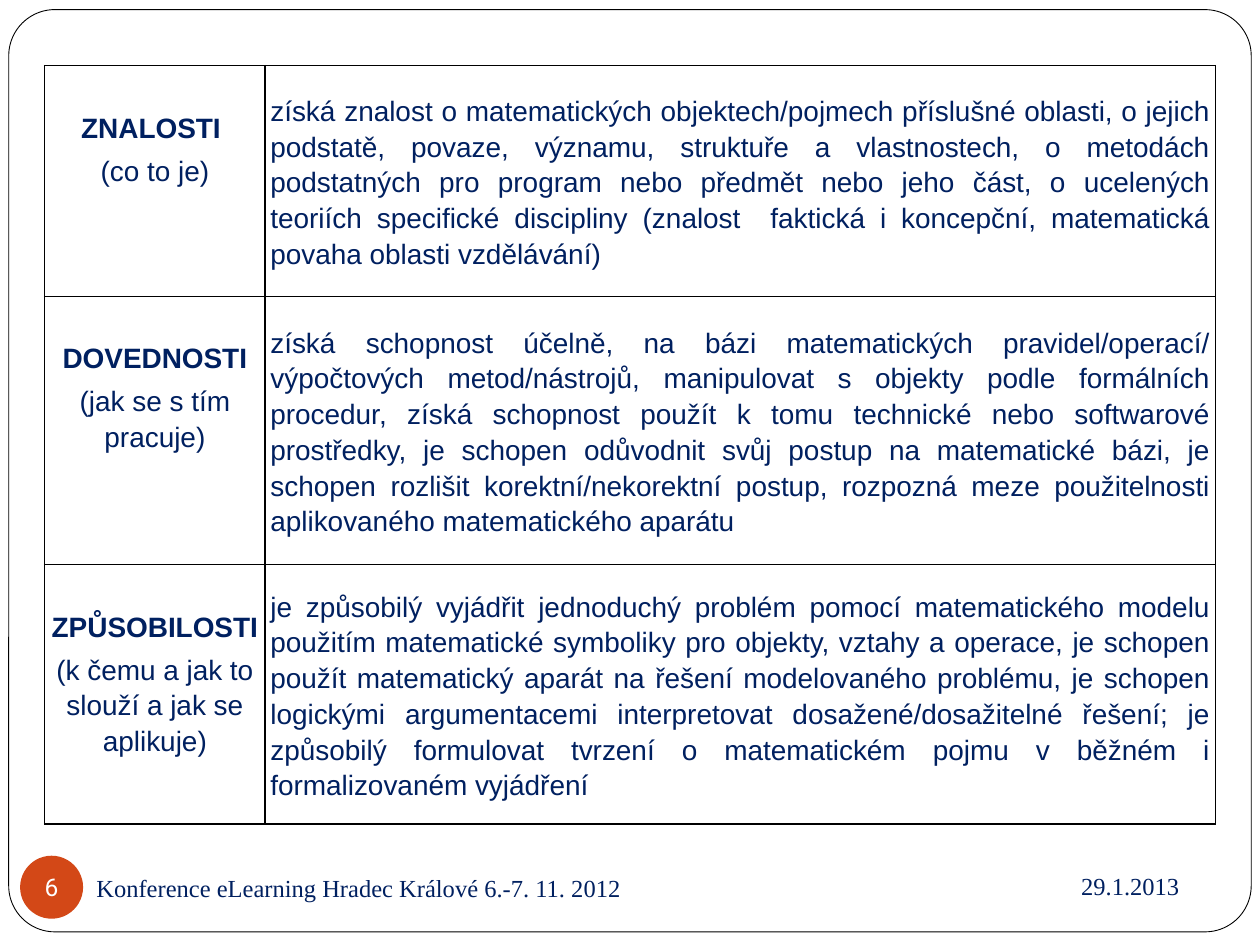
"""Build the slide with the table of learning outcomes."""
import pptx
import pptx.util
import pptx.oxml
import pptx.dml.color
import pptx.enum.shapes
import pptx.enum.text
import pptx.oxml.ns

Pt = pptx.util.Pt
ALIGN = pptx.enum.text.PP_ALIGN
MID = pptx.enum.text.MSO_ANCHOR.MIDDLE
TOP = pptx.enum.text.MSO_ANCHOR.TOP
KIND = pptx.enum.shapes.MSO_SHAPE
HUES = {"ink": "002060", "line": "000000", "back": "FFFFFF", "badge": "D34817"}
ROWS = [
    (131.8, "ZNALOSTI ", "(co to je)",
     "získá znalost o matematických objektech/pojmech příslušné oblasti, o jejich "
     "podstatě, povaze, významu, struktuře a vlastnostech, o metodách podstatných "
     "pro program nebo předmět nebo jeho část, o ucelených teoriích specifické "
     "discipliny (znalost  faktická i koncepční, matematická povaha oblasti vzdělávání)"),
    (153.4, "DOVEDNOSTI", "(jak se s tím pracuje)",
     "získá schopnost účelně, na bázi matematických pravidel/operací/ výpočtových "
     "metod/nástrojů, manipulovat s objekty podle formálních procedur, získá schopnost "
     "použít k tomu technické nebo softwarové prostředky, je schopen odůvodnit svůj "
     "postup na matematické bázi, je schopen rozlišit korektní/nekorektní postup, "
     "rozpozná meze použitelnosti aplikovaného matematického aparátu"),
    (148.3, "ZPŮSOBILOSTI", "(k čemu a jak to slouží a jak se aplikuje)",
     "je způsobilý vyjádřit jednoduchý problém pomocí matematického modelu použitím "
     "matematické symboliky pro objekty, vztahy a operace, je schopen použít "
     "matematický aparát na řešení modelovaného problému, je schopen logickými "
     "argumentacemi interpretovat dosažené/dosažitelné řešení; je způsobilý formulovat "
     "tvrzení o matematickém pojmu v běžném i formalizovaném vyjádření"),
]


def put(item, form):
    for name, value in form.items():
        setattr(item, name, value)


def tint(hue):
    return pptx.dml.color.RGBColor.from_string(HUES[hue])


class Deck:
    """Hold the style and the current slide."""

    small = {"size": Pt(14), "name": "Times New Roman"}
    badge = {"size": Pt(14), "name": "Roboto"}
    body = {"size": Pt(16), "name": "Arial"}
    gaps = {"line_spacing": 1.15, "space_before": Pt(2), "space_after": Pt(2)}
    sides = {"margin_left": Pt(3), "margin_right": Pt(3), "margin_bottom": 0}

    def __init__(self):
        self.show = pptx.Presentation()
        put(self.show, {"slide_width": Pt(720), "slide_height": Pt(540)})
        self.slide = self.show.slides.add_slide(self.show.slide_layouts[6])

    def word(self, para, text, font, hue="ink", bold=False, **form):
        put(para, form)
        run = para.add_run()
        run.text = text
        put(run.font, {**font, "bold": bold})
        run.font.color.rgb = tint(hue)

    def shape(self, kind, box, fill, line=None):
        item = self.slide.shapes.add_shape(kind, *map(Pt, box))
        item.shadow.inherit = False
        item.fill.solid()
        item.fill.fore_color.rgb = tint(fill)
        if line:
            item.line.color.rgb = tint(line)
            item.line.width = Pt(0.5)
        else:
            item.line.fill.background()
        return item

    def label(self, box, text, align):
        frame = self.slide.shapes.add_textbox(*map(Pt, box)).text_frame
        put(frame, {"word_wrap": True, "vertical_anchor": MID})
        self.word(frame.paragraphs[0], text, self.small, alignment=align)

    def disc(self, box, text):
        frame = self.shape(KIND.OVAL, box, "badge").text_frame
        put(frame, {"margin_left": 0, "margin_right": 0, "margin_top": 0,
                    "margin_bottom": 0, "word_wrap": False, "vertical_anchor": MID})
        self.word(frame.paragraphs[0], text, self.badge, "back", alignment=ALIGN.CENTER)

    def edge(self, cell):
        props = cell._tc.get_or_add_tcPr()
        for place, side in enumerate("LRTB"):
            props.insert(place, pptx.oxml.parse_xml(
                f'<a:ln{side} {pptx.oxml.ns.nsdecls("a")} w="{Pt(1)}"><a:solidFill>'
                f'<a:srgbClr val="{HUES["line"]}"/></a:solidFill></a:ln{side}>'))

    def cell(self, cell, parts, align, anchor, top):
        put(cell, {**self.sides, "margin_top": Pt(top), "vertical_anchor": anchor})
        cell.fill.background()
        self.edge(cell)
        frame = cell.text_frame
        for rank, (text, bold) in enumerate(parts):
            para = frame.add_paragraph() if rank else frame.paragraphs[0]
            self.word(para, text, self.body, bold=bold, alignment=align, **self.gaps)

    def table(self, box, wide, rows):
        grid = self.slide.shapes.add_table(len(rows), len(wide), *map(Pt, box)).table
        put(grid, {"first_row": False, "horz_banding": False})
        for col, width in zip(grid.columns, wide):
            col.width = Pt(width)
        for rank, (height, head, hint, text) in enumerate(rows):
            grid.rows[rank].height = Pt(height)
            self.cell(grid.cell(rank, 0), [(head, True), (hint, False)],
                      ALIGN.CENTER, TOP, 24.5)
            self.cell(grid.cell(rank, 1), [(text, False)], ALIGN.JUSTIFY, MID, 0)


def main():
    deck = Deck()
    frame = deck.shape(KIND.ROUNDED_RECTANGLE, (5, 5.5, 710, 527), "back", "line")
    frame.adjustments[0] = 0.05
    deck.label((486, 487.5, 195, 37.5), "29.1.2013", ALIGN.RIGHT)
    deck.label((48, 474.5, 363, 65.5),
               "Konference eLearning Hradec Králové 6.-7. 11. 2012", ALIGN.LEFT)
    deck.disc((11.5, 489, 36, 36), "6")
    deck.table((25.5, 37.5, 669, 433.5), (126, 543), ROWS)
    deck.show.save("out.pptx")


if __name__ == "__main__":
    main()
